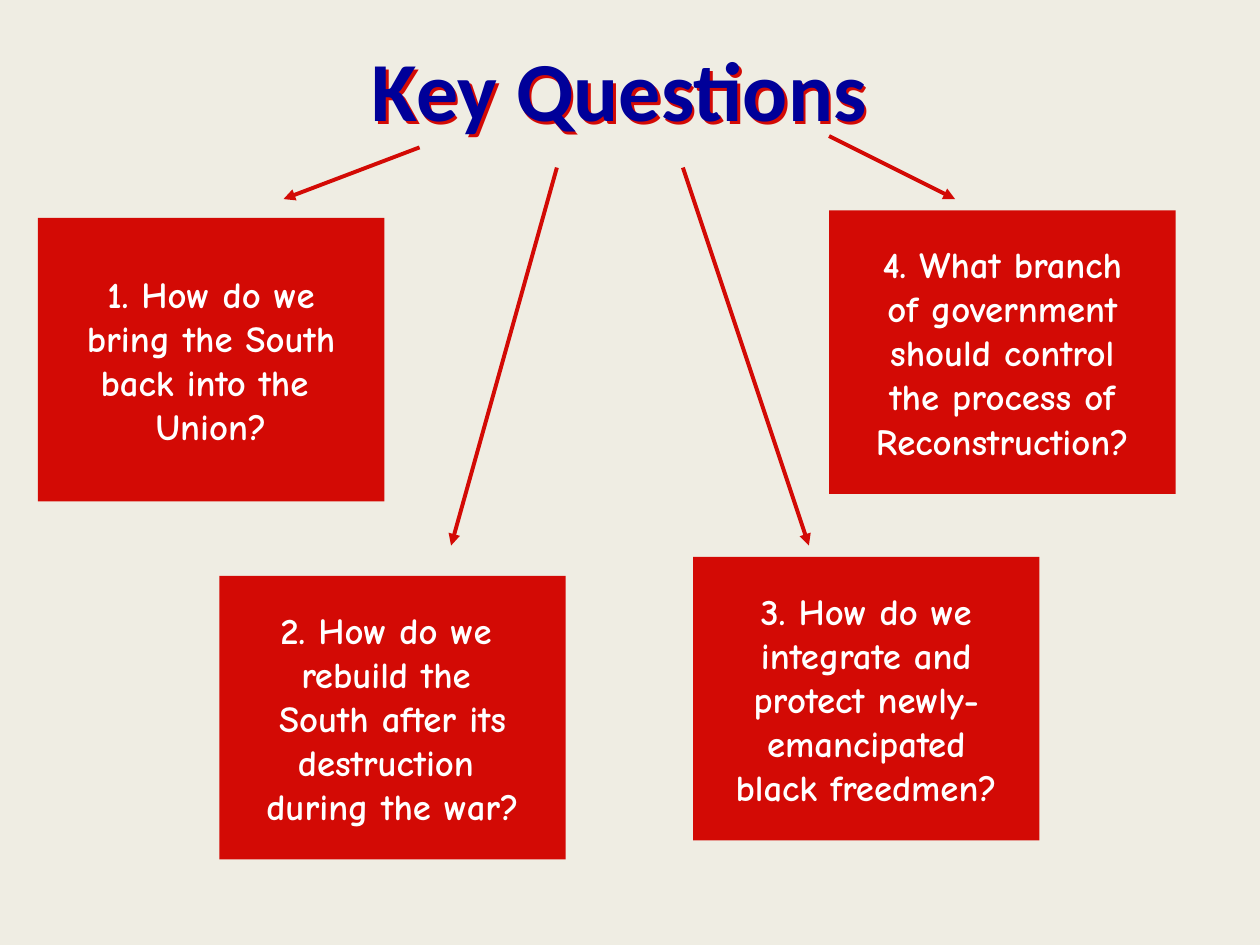
from dataclasses import dataclass

from lxml import etree
from pptx import Presentation
from pptx.dml.color import RGBColor as Rgb
from pptx.enum import shapes as sh, text as tx
from pptx.oxml import ns
from pptx.util import Inches, Pt


@dataclass(frozen=True)
class Theme:
    paper: str = "EFEDE3"
    red: str = "D30A05"
    navy: str = "000099"
    white: str = "FFFFFF"
    head: str = "Calibri"
    body: str = "Comic Neue"
    big: int = 48
    small: int = 21
    rule: float = 2.25


def add(node, tag, **attrs):
    return etree.SubElement(node, ns.qn(tag), attrs)


class Page:
    def __init__(self, deck, theme):
        self.theme = theme
        self.slide = deck.slides.add_slide(deck.slide_layouts[5])
        fill = self.slide.background.fill
        fill.solid()
        fill.fore_color.rgb = Rgb.from_string(theme.paper)

    def label(self, para, words, face, size, color):
        """Center a paragraph, one bold run per line."""
        para.alignment = tx.PP_ALIGN.CENTER
        for i, line in enumerate(words.split("\n")):
            if i:
                para.add_line_break()
            run = para.add_run()
            run.text = line
            font = run.font
            font.name, font.size, font.bold = face, Pt(size), True
            font.color.rgb = Rgb.from_string(color)

    def title(self, words, left, top, width, height):
        t = self.theme
        box = self.slide.shapes.title
        box.left, box.top = Inches(left), Inches(top)
        box.width, box.height = Inches(width), Inches(height)
        frame = box.text_frame
        frame.word_wrap = True
        frame.auto_size = tx.MSO_AUTO_SIZE.SHAPE_TO_FIT_TEXT
        frame.vertical_anchor = tx.MSO_ANCHOR.TOP
        self.label(frame.paragraphs[0], words, t.head, t.big, t.navy)
        # Hard red shadow, down and to the right
        box.fill.background()
        effects = add(box._element.spPr, "a:effectLst")
        shade = add(effects, "a:outerShdw", dist=str(Inches(0.03)),
                    dir="2700000", algn="ctr", rotWithShape="0")
        add(shade, "a:srgbClr", val=t.red)

    def card(self, words, left, top, width=2.75, height=2.25):
        t = self.theme
        box = self.slide.shapes.add_shape(
            sh.MSO_SHAPE.RECTANGLE, Inches(left), Inches(top),
            Inches(width), Inches(height))
        box.shadow.inherit = False
        box.fill.solid()
        box.fill.fore_color.rgb = Rgb.from_string(t.red)
        box.line.fill.background()
        frame = box.text_frame
        frame.word_wrap = False
        frame.vertical_anchor = tx.MSO_ANCHOR.MIDDLE
        self.label(frame.paragraphs[0], words, t.body, t.small, t.white)

    def arrow(self, start, end):
        link = self.slide.shapes.add_connector(
            sh.MSO_CONNECTOR.STRAIGHT, *map(Inches, start + end))
        link.line.width = Pt(self.theme.rule)
        link.line.color.rgb = Rgb.from_string(self.theme.red)
        props = link._element.spPr
        add(props.find(ns.qn("a:ln")), "a:tailEnd", type="triangle")
        add(props, "a:effectLst")


def main():
    deck = Presentation()
    deck.slide_width, deck.slide_height = Inches(10), Inches(7.5)
    page = Page(deck, Theme())
    page.title("Key Questions", 0.33, 0.25, 9.17, 0.9)

    # Question cards: words, left, top
    cards = [
        ("1. How do we\nbring the South\nback into the \nUnion?", 0.3, 1.73),
        ("2. How do we \nrebuild the \nSouth after its\ndestruction \n"
         "during the war?", 1.74, 4.57),
        ("3. How do we\nintegrate and\nprotect newly-\nemancipated\n"
         "black freedmen?", 5.5, 4.42),
        ("4. What branch\nof government\nshould control\nthe process of\n"
         "Reconstruction?", 6.58, 1.67),
    ]
    for card in cards:
        page.card(*card)

    # Arrows from the title to the cards
    arrows = [
        ((3.33, 1.17), (2.25, 1.58)),
        ((4.42, 1.33), (3.58, 4.33)),
        ((5.42, 1.33), (6.42, 4.33)),
        ((6.58, 1.08), (7.58, 1.58)),
    ]
    for start, end in arrows:
        page.arrow(start, end)

    deck.save("out.pptx")


if __name__ == "__main__":
    main()
